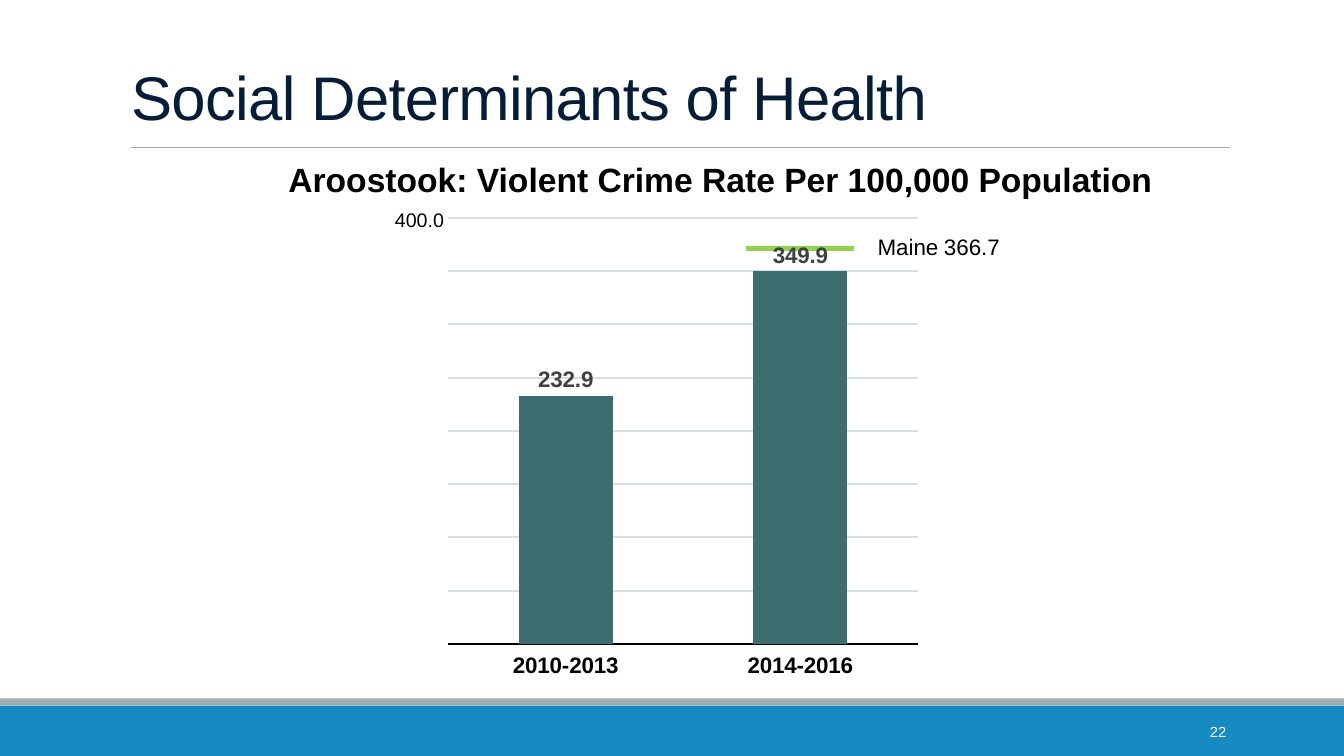
from lxml import etree
from pptx import Presentation
from pptx.chart.data import CategoryChartData
from pptx.dml.color import RGBColor
from pptx.enum.chart import XL_CHART_TYPE, XL_LABEL_POSITION, XL_TICK_LABEL_POSITION, XL_TICK_MARK
from pptx.enum.shapes import MSO_CONNECTOR, MSO_SHAPE
from pptx.enum.text import MSO_ANCHOR, MSO_AUTO_SIZE, PP_ALIGN
from pptx.oxml import parse_xml
from pptx.oxml.ns import nsdecls, qn
from pptx.util import Inches, Pt

FONT = "Arial"
BLACK = "000000"
GREY = "9FADB1"
GREEN = "94CF4F"


def rgb(color):
    """Turn a hex string into a colour."""
    return RGBColor.from_string(color)


def style_font(font, size, color, bold=False):
    """Set typeface, size, colour and weight."""
    font.name = FONT
    font.size = Pt(size)
    font.bold = bold
    font.color.rgb = rgb(color)


def place(shape, left, top, width, height):
    """Move and size a shape in inches."""
    shape.left, shape.top = Inches(left), Inches(top)
    shape.width, shape.height = Inches(width), Inches(height)


def add_run(paragraph, text, size, color, bold=False):
    """Append a formatted run and return it."""
    run = paragraph.add_run()
    run.text = text
    style_font(run.font, size, color, bold)
    return run


def add_bar(slide, box, color):
    """Draw a plain filled rectangle."""
    bar = slide.shapes.add_shape(MSO_SHAPE.RECTANGLE, *map(Inches, box))
    bar.shadow.inherit = False
    bar.fill.solid()
    bar.fill.fore_color.rgb = rgb(color)
    bar.line.fill.background()


def add_rule(slide, left, right, top, color):
    """Draw the thin line below the title."""
    rule = slide.shapes.add_connector(
        MSO_CONNECTOR.STRAIGHT, Inches(left), Inches(top), Inches(right), Inches(top))
    rule.line.color.rgb = rgb(color)
    rule.line.width = Pt(0.5)
    etree.SubElement(rule._element.spPr, qn("a:effectLst"))


def add_label(slide, box, runs, color=BLACK, align=PP_ALIGN.CENTER, anchor=MSO_ANCHOR.TOP):
    """Add a text box made of (text, size) runs."""
    frame = slide.shapes.add_textbox(*map(Inches, box)).text_frame
    frame.word_wrap = True
    frame.vertical_anchor = anchor
    frame.paragraphs[0].alignment = align
    for text, size in runs:
        add_run(frame.paragraphs[0], text, size, color)


def fill_title(title, text):
    """Format the title placeholder."""
    place(title, 1.2, 0.31, 11, 1.06)
    frame = title.text_frame
    frame.auto_size = MSO_AUTO_SIZE.NONE
    frame.vertical_anchor = MSO_ANCHOR.BOTTOM
    paragraph = frame.paragraphs[0]
    paragraph.alignment = PP_ALIGN.LEFT
    paragraph.line_spacing = 0.85
    run = add_run(paragraph, text, 44, "061D38")
    run.font._element.set("spc", "-50")


def fill_heading(body, text):
    """Format the body placeholder as the chart heading."""
    place(body, 2.76, 1.57, 9.09, 0.44)
    frame = body.text_frame
    frame.auto_size = MSO_AUTO_SIZE.NONE
    frame.margin_left = frame.margin_right = 0
    paragraph = frame.paragraphs[0]
    properties = paragraph._p.get_or_add_pPr()
    properties.set("marL", str(Inches(0.1)))
    properties.set("indent", str(-Inches(0.1)))
    bullet_color = etree.SubElement(properties, qn("a:buClr"))
    etree.SubElement(bullet_color, qn("a:srgbClr"), val=GREY)
    etree.SubElement(properties, qn("a:buChar"), char=" ")
    paragraph.line_spacing = 0.9
    paragraph.space_before = Pt(0)
    paragraph.space_after = Pt(2)
    add_run(paragraph, text, 24, BLACK, True)


def set_plot_area(chart, **fractions):
    """Fix the inner plot area as fractions of the chart."""
    values = "".join(f'<c:{key} val="{value}"/>' for key, value in fractions.items())
    layout = parse_xml(
        f'<c:layout {nsdecls("c")}><c:manualLayout><c:layoutTarget val="inner"/>'
        f'<c:xMode val="edge"/><c:yMode val="edge"/>{values}</c:manualLayout></c:layout>')
    plot_area = chart._chartSpace.chart.plotArea
    for existing in plot_area.findall(qn("c:layout")):
        plot_area.remove(existing)
    plot_area.insert(0, layout)


def format_axes(chart):
    """Style the period axis and the hidden rate axis with its grid."""
    periods, rates = chart.category_axis, chart.value_axis
    periods.major_tick_mark = periods.minor_tick_mark = XL_TICK_MARK.NONE
    periods.tick_label_position = XL_TICK_LABEL_POSITION.LOW
    style_font(periods.tick_labels.font, 16, BLACK, True)
    periods.format.line.color.rgb = rgb(BLACK)
    periods.format.line.width = Pt(1.5)
    rates.minimum_scale, rates.maximum_scale, rates.major_unit = 0, 400, 50
    rates.visible = False
    rates.has_major_gridlines = True
    rates.major_gridlines.format.line.color.rgb = rgb("D9DEE0")
    rates.major_gridlines.format.line.width = Pt(1.5)


def add_crime_chart(slide):
    """Add the column chart of crime rates."""
    data = CategoryChartData(number_format="0.0")
    data.categories = ["2010-2013", "2014-2016"]
    data.add_series("Series 1", [232.9, 349.9])
    box = map(Inches, (3.74, 2, 5.4, 4.77))
    chart = slide.shapes.add_chart(XL_CHART_TYPE.COLUMN_CLUSTERED, *box, data).chart
    chart.has_legend = chart.has_title = False
    style_font(chart.font, 10, BLACK)
    format_axes(chart)
    plot = chart.plots[0]
    plot.gap_width = 150
    plot.vary_by_categories = False
    rates = plot.series[0]
    rates.format.fill.solid()
    rates.format.fill.fore_color.rgb = rgb("3C6E6F")
    labels = rates.data_labels
    labels.show_value = True
    labels.position = XL_LABEL_POSITION.OUTSIDE_END
    labels.number_format = "0.0"
    labels.number_format_is_linked = False
    style_font(labels.font, 16, "404040", True)
    set_plot_area(chart, x=0.131, y=0.034, w=0.862, h=0.886)


def main():
    """Build the slide and save it."""
    deck = Presentation()
    deck.slide_width, deck.slide_height = Inches(13.33), Inches(7.5)
    slide = deck.slides.add_slide(deck.slide_layouts[1])
    add_bar(slide, (0, 7, 13.33, 0.5), "178AC1")
    add_bar(slide, (0, 6.93, 13.33, 0.07), GREY)
    add_rule(slide, 1.3, 12.2, 1.46, "A6A6A6")
    fill_title(slide.shapes.title, "Social Determinants of Health")
    fill_heading(slide.placeholders[1], "Aroostook: Violent Crime Rate Per 100,000 Population")
    add_bar(slide, (7.4, 2.44, 1.07, 0.05), GREEN)
    add_crime_chart(slide)
    add_label(slide, (8.47, 2.26, 1.68, 0.3), [("Maine", 16), (" ", 14), ("366.7", 16)])
    add_label(slide, (3.74, 2.01, 0.84, 0.3), [("400.0", 14)])
    add_label(slide, (10.83, 7.06, 1.43, 0.4), [("22", 10.5)], "FFFFFF",
              PP_ALIGN.RIGHT, MSO_ANCHOR.MIDDLE)
    deck.save("out.pptx")


if __name__ == "__main__":
    main()
